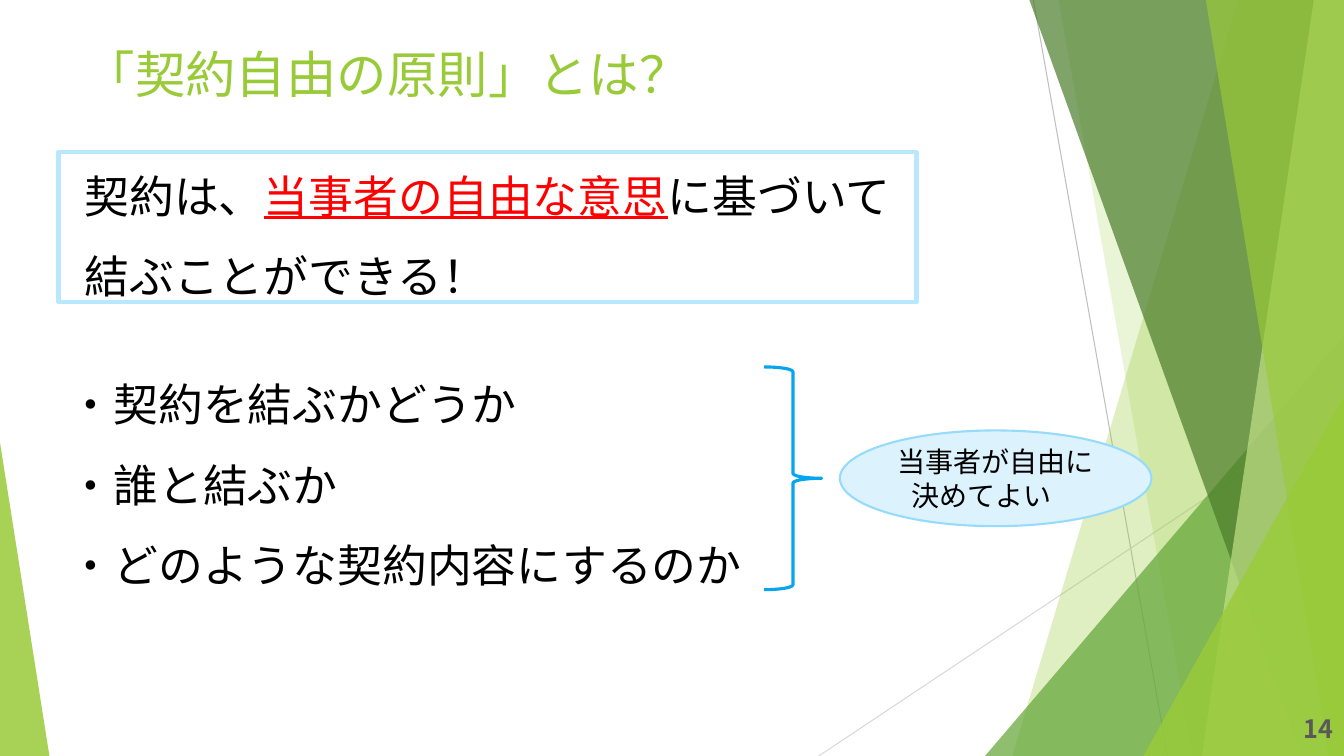
"""Build the slide on the principle of freedom of contract."""
from lxml import etree
from pptx import Presentation
from pptx.dml.color import RGBColor
from pptx.enum.shapes import MSO_CONNECTOR, MSO_SHAPE
from pptx.enum.text import MSO_ANCHOR, PP_ALIGN
from pptx.oxml.ns import qn
from pptx.util import Inches, Pt

STRAIGHT = MSO_CONNECTOR.STRAIGHT
RECT, OVAL = MSO_SHAPE.RECTANGLE, MSO_SHAPE.OVAL
BRACE, TRIANGLE = MSO_SHAPE.RIGHT_BRACE, MSO_SHAPE.ISOSCELES_TRIANGLE
LEFT, CENTER = PP_ALIGN.LEFT, PP_ALIGN.CENTER
TOP, MIDDLE = MSO_ANCHOR.TOP, MSO_ANCHOR.MIDDLE

WIDTH, HEIGHT = 13.33, 7.5
FONT, NUMBER_FONT = "Cabin", "Noto Sans CJK JP"
BLACK, WHITE, RED, GREEN = "000000", "FFFFFF", "FF0000", "99CB38"

TITLE = "「契約自由の原則」とは？"
RULE_START, RULE_KEY, RULE_END = "契約は、", "当事者の自由な意思", "に基づいて"
RULE_LINE_2 = "結ぶことができる！"
CHOICES = ["・契約を結ぶかどうか", "・誰と結ぶか", "・どのような契約内容にするのか"]
CALLOUT = "当事者が自由に決めてよい　"
NUMBER = "14"

HAIRLINES = [((10.25, 0), (11.58, HEIGHT), "BFBFBF"),
             ((WIDTH, 4.03), (8.12, HEIGHT), "D9D9D9")]
# Strips give the x of the left edge at top and bottom; wedges give a box and apex.
DECOR = [
    ("strip", (12.28, 10.04), GREEN, 30),
    ("strip", (10.5, 11.83), GREEN, 20),
    ("wedge", (9.77, 3.33, 3.56, 4.17, 1), "63A537", 72),
    ("strip", (10.21, 12.91), "4A7C29", 70),
    ("strip", (13.03, 11.92), "C2E088", 70),
    ("strip", (11.96, 13.18), GREEN, 65),
    ("wedge", (11.34, 3.93, 1.99, 3.57, 1), GREEN, 80),
    ("wedge", (0, 4.39, 0.49, 3.11, 0), GREEN, 85),
]


def rgb(color):
    return RGBColor.from_string(color)


def inches(values):
    return [Inches(v) for v in values]


def paint(sp, fill=None, line=None, width=0):
    sp.shadow.inherit = False
    if fill:
        sp.fill.solid()
        sp.fill.fore_color.rgb = rgb(fill)
    else:
        sp.fill.background()
    if line:
        sp.line.color.rgb = rgb(line)
        sp.line.width = Pt(width)
    else:
        sp.line.fill.background()


def add_hairline(shapes, start, end, color):
    line = shapes.add_connector(STRAIGHT, *inches(start + end))
    line.line.color.rgb = rgb(color)
    line.line.width = Pt(0.75)
    etree.SubElement(line._element.spPr, qn("a:effectLst"))


def add_decor(shapes, kind, geometry, color, opacity):
    if kind == "strip":
        top, bottom = geometry
        corners = [(top, 0), (WIDTH, 0), (WIDTH, HEIGHT), (bottom, HEIGHT)]
        start, *rest = [inches(c) for c in corners]
        builder = shapes.build_freeform(*start)
        builder.add_line_segments(rest)
        sp = builder.convert_to_shape()
    else:
        sp = shapes.add_shape(TRIANGLE, *inches(geometry[:4]))
        sp.adjustments[0] = geometry[4]
    paint(sp, color)
    clr = sp._element.spPr.find(qn("a:solidFill"))[0]
    etree.SubElement(clr, qn("a:alpha"), val=str(opacity * 1000))


def place(sp, box):
    sp.left, sp.top, sp.width, sp.height = inches(box)


def set_frame(sp, anchor, wrap=True):
    tf = sp.text_frame
    tf.word_wrap = wrap
    tf.vertical_anchor = anchor
    return tf


def style(p, size, color=BLACK, spacing=1.0, align=LEFT, name=FONT):
    p.alignment = align
    p.line_spacing = spacing
    p.space_before = Pt(0)
    p.font.size = Pt(size)
    p.font.name = name
    p.font.color.rgb = rgb(color)
    props = p._p.pPr.find(qn("a:defRPr"))
    etree.SubElement(props, qn("a:ea"), typeface=name)


def main():
    prs = Presentation()
    prs.slide_width, prs.slide_height = inches((WIDTH, HEIGHT))
    s = prs.slides.add_slide(prs.slide_layouts[1])
    shapes = s.shapes
    title, body = s.placeholders

    for hairline in HAIRLINES:
        add_hairline(shapes, *hairline)
    for part in DECOR:
        add_decor(shapes, *part)

    shapes._spTree.append(title._element)
    place(title, (0.74, 0.39, 9.48, 0.67))
    tf = set_frame(title, MIDDLE)
    tf.text = TITLE
    style(tf.paragraphs[0], 36, GREEN)

    brace = shapes.add_shape(BRACE, *inches((7.58, 3.64, 0.57, 2.21)))
    paint(brace, line="08A5EF", width=2.25)

    shapes._spTree.append(body._element)
    place(body, (0.58, 3.42, 7.57, 2.83))
    tf = set_frame(body, TOP)
    tf.text = "\n".join(CHOICES)
    for p in tf.paragraphs:
        style(p, 32, spacing=1.5)
        pPr = p._p.pPr
        pPr.set("marL", "0")
        pPr.set("indent", "0")
        pPr.find(qn("a:defRPr")).addprevious(etree.Element(qn("a:buNone")))

    callout = shapes.add_shape(OVAL, *inches((8.33, 4.27, 3.09, 0.95)))
    paint(callout, "DCF3FE", "97DBFB", 1.5)
    tf = set_frame(callout, MIDDLE)
    tf.text = CALLOUT
    style(tf.paragraphs[0], 20, align=CENTER)

    frame = shapes.add_shape(RECT, *inches((0.58, 1.51, 8.51, 1.49)))
    paint(frame, WHITE, "B9E7FD", 3)

    rule = shapes.add_textbox(*inches((0.74, 1.62, 8.63, 1.42)))
    tf = set_frame(rule, TOP)
    p = tf.paragraphs[0]
    style(p, 32)
    for text in (RULE_START, RULE_KEY, RULE_END):
        r = p.add_run()
        r.text = text
        if text == RULE_KEY:
            r.font.color.rgb = rgb(RED)
            r.font.underline = True
    p = tf.add_paragraph()
    p.text = RULE_LINE_2
    style(p, 32, spacing=1.5)

    number = shapes.add_textbox(*inches((12.83, 7.03, 0.5, 0.4)))
    tf = set_frame(number, TOP, wrap=False)
    tf.text = NUMBER
    p = tf.paragraphs[0]
    style(p, 18, "595959", name=NUMBER_FONT)
    p.font.bold = True

    prs.save("out.pptx")


if __name__ == "__main__":
    main()
